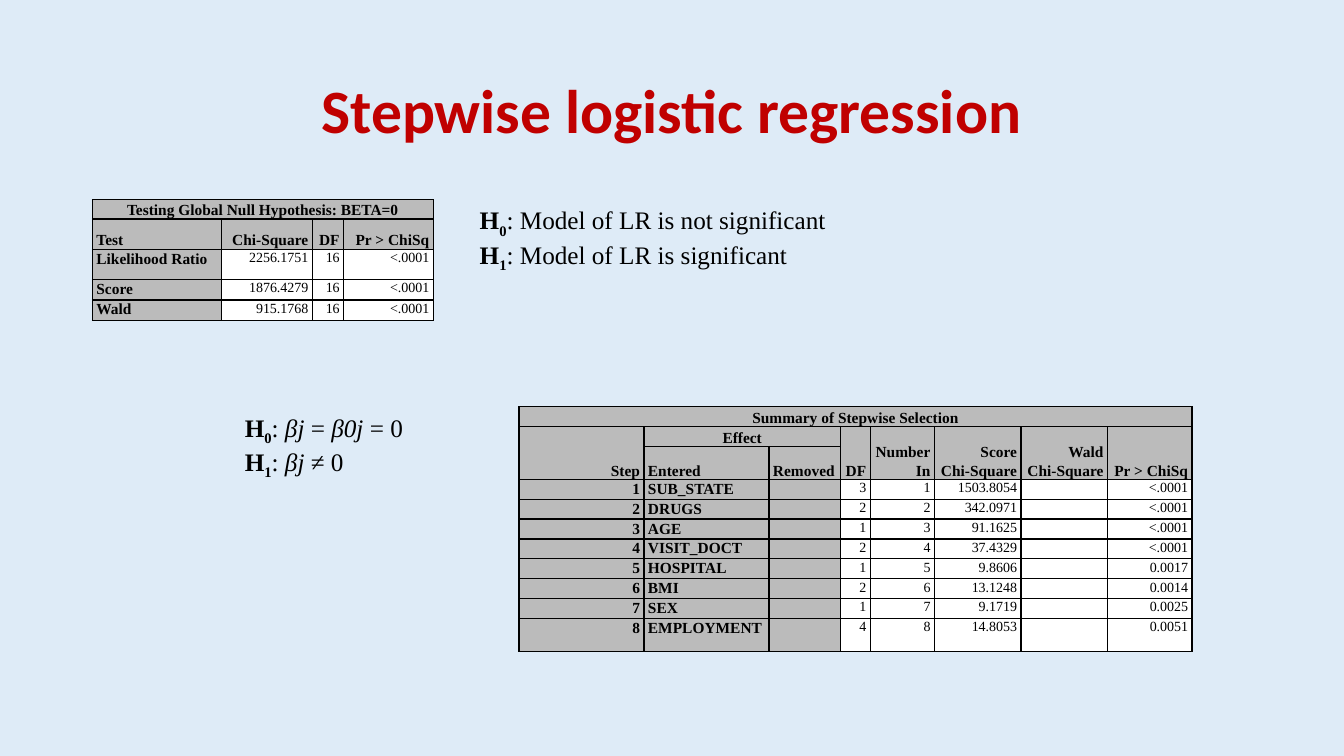
from copy import deepcopy

from lxml import etree
from pptx import Presentation
from pptx.dml.color import RGBColor
from pptx.enum.text import MSO_ANCHOR, MSO_AUTO_SIZE, PP_ALIGN
from pptx.oxml.ns import qn
from pptx.util import Cm, Pt

LEFT, CENTER, RIGHT = PP_ALIGN.LEFT, PP_ALIGN.CENTER, PP_ALIGN.RIGHT
TOP, MIDDLE, BOTTOM = MSO_ANCHOR.TOP, MSO_ANCHOR.MIDDLE, MSO_ANCHOR.BOTTOM
FIT_SHAPE = MSO_AUTO_SIZE.SHAPE_TO_FIT_TEXT

PALE_BLUE = RGBColor(0xDE, 0xEB, 0xF7)
DARK_RED = RGBColor(0xC0, 0x00, 0x00)
GREY = RGBColor(0xBB, 0xBB, 0xBB)
WHITE = RGBColor(0xFF, 0xFF, 0xFF)
BLACK = RGBColor(0x00, 0x00, 0x00)

TITLE_FONT, BODY_FONT = "Calibri", "Times New Roman"
TITLE_STYLE = {"name": TITLE_FONT, "size": Pt(44), "bold": True}
HYPOTHESIS_STYLE = {"name": BODY_FONT, "size": Pt(18)}
LABEL_STYLE = {"name": BODY_FONT, "size": Pt(11), "bold": True}
VALUE_STYLE = {"name": BODY_FONT, "size": Pt(10), "bold": False}
CELL_FORMAT = {"margin_left": Cm(0.1), "margin_right": Cm(0.1),
               "margin_top": 0, "margin_bottom": 0}
CELL_SPACING = {"line_spacing": 1.07, "space_before": Pt(3), "space_after": Pt(3)}


def apply(target, values):
    for name, value in values.items():
        setattr(target, name, value)


class StatSlide:
    """Holds the current slide and draws its elements in one style."""

    def __init__(self, presentation):
        self.slide = presentation.slides.add_slide(presentation.slide_layouts[5])
        background = self.slide.background.fill
        background.solid()
        background.fore_color.rgb = PALE_BLUE

    def style(self, font, values, color=BLACK):
        apply(font, values)
        font.color.rgb = color

    def title(self, text, left, top, width, height):
        title = self.slide.shapes.title
        apply(title, {"left": Cm(left), "top": Cm(top),
                      "width": Cm(width), "height": Cm(height)})
        title.text_frame.vertical_anchor = MIDDLE
        line = title.text_frame.paragraphs[0]
        line.text = text
        apply(line, {"alignment": CENTER, "line_spacing": 0.9})
        self.style(line.runs[0].font, TITLE_STYLE, DARK_RED)

    def hypotheses(self, statements, left, top, width, height):
        """Write H0, H1, ...; each statement is a list of (text, italic)."""
        box = self.slide.shapes.add_textbox(Cm(left), Cm(top), Cm(width), Cm(height))
        frame = box.text_frame
        apply(frame, {"word_wrap": True, "auto_size": FIT_SHAPE})
        for index, statement in enumerate(statements):
            line = frame.add_paragraph() if index else frame.paragraphs[0]
            parts = [("H", {"bold": True}), (str(index), {"bold": True})]
            parts += [(text, {"italic": italic}) for text, italic in statement]
            for text, emphasis in parts:
                run = line.add_run()
                run.text = text
                self.style(run.font, HYPOTHESIS_STYLE | emphasis)
            subscript = line.runs[1]
            subscript.font._element.set("baseline", "-25000")

    def borders(self, cell):
        properties = cell._tc.get_or_add_tcPr()
        for side in ("lnL", "lnR", "lnT", "lnB"):
            edge = etree.SubElement(properties, qn(f"a:{side}"), w=str(Pt(1)))
            fill = etree.SubElement(edge, qn("a:solidFill"))
            etree.SubElement(fill, qn("a:srgbClr"), val=str(BLACK))

    def cell(self, cell, text, is_label, alignment, anchor):
        self.borders(cell)
        cell.fill.solid()
        cell.fill.fore_color.rgb = GREY if is_label else WHITE
        apply(cell, CELL_FORMAT | {"vertical_anchor": anchor})
        line = cell.text_frame.paragraphs[0]
        line.text = text
        apply(line, CELL_SPACING | {"alignment": alignment})
        for run in line.runs:
            self.style(run.font, LABEL_STYLE if is_label else VALUE_STYLE)
        # Line breaks and empty cells need a text size of their own
        for line_break in line._p.findall(qn("a:br")):
            line_break.append(deepcopy(line.runs[0].font._element))
        if not text:
            etree.SubElement(line._p, qn("a:endParaRPr"), sz="1000")

    def table(self, rows, left, top, widths, heights, alignments,
              header_rows, label_columns, merges):
        """Draw rows; merges are (row, column, last row, last column)."""
        grid = self.slide.shapes.add_table(
            len(rows), len(widths), Cm(left), Cm(top),
            Cm(sum(widths)), Cm(sum(heights))).table
        for column, width in zip(grid.columns, widths):
            column.width = Cm(width)
        for row, height in zip(grid.rows, heights):
            row.height = Cm(height)
        centered = {(r, c) for r, c, _, last in merges if last > c}
        for r, texts in enumerate(rows):
            for c, text in enumerate(texts):
                in_header = r < header_rows
                self.cell(grid.cell(r, c), text, in_header or c < label_columns,
                          CENTER if (r, c) in centered else alignments[c],
                          BOTTOM if in_header else TOP)
        for r, c, last_row, last_column in merges:
            grid.cell(r, c).merge(grid.cell(last_row, last_column))


def main():
    presentation = Presentation()
    presentation.slide_width, presentation.slide_height = Cm(33.87), Cm(19.05)
    page = StatSlide(presentation)

    # Title
    page.title("Stepwise logistic regression", 2.33, 1.01, 29.21, 3.68)

    # Stepwise selection summary
    steps = [
        ("SUB_STATE", "3", "1503.8054", "<.0001"),
        ("DRUGS", "2", "342.0971", "<.0001"),
        ("AGE", "1", "91.1625", "<.0001"),
        ("VISIT_DOCT", "2", "37.4329", "<.0001"),
        ("HOSPITAL", "1", "9.8606", "0.0017"),
        ("BMI", "2", "13.1248", "0.0014"),
        ("SEX", "1", "9.1719", "0.0025"),
        ("EMPLOYMENT", "4", "14.8053", "0.0051"),
    ]
    selection = [
        ["Summary of Stepwise Selection"] + [""] * 7,
        ["Step", "Effect", "", "DF", "Number\nIn", "Score\nChi-Square",
         "Wald\nChi-Square", "Pr > ChiSq"],
        ["", "Entered", "Removed"] + [""] * 5,
    ]
    selection += [[str(n), effect, "", df, str(n), score, "", probability]
                  for n, (effect, df, score, probability) in enumerate(steps, 1)]
    tall_headers = [(1, column, 2, column) for column in (0, 3, 4, 5, 6, 7)]
    page.table(selection, 13.08, 10.25,
               widths=[3.15, 3.15, 1.8, 0.75, 1.62, 2.18, 2.18, 2.13],
               heights=[0.5, 0.5, 0.83] + [0.5] * 7 + [0.83],
               alignments=[RIGHT, LEFT, LEFT] + [RIGHT] * 5,
               header_rows=3, label_columns=3,
               merges=[(0, 0, 0, 7), (1, 1, 1, 2)] + tall_headers)

    # Global null hypothesis tests
    tests = [("Likelihood Ratio", "2256.1751"), ("Score", "1876.4279"),
             ("Wald", "915.1768")]
    global_tests = [
        ["Testing Global Null Hypothesis: BETA=0", "", "", ""],
        ["Test", "Chi-Square", "DF", "Pr > ChiSq"],
    ]
    global_tests += [[test, chi_square, "16", "<.0001"] for test, chi_square in tests]
    page.table(global_tests, 2.33, 5.03,
               widths=[3.25, 2.29, 0.79, 2.26],
               heights=[0.49, 0.76, 0.76, 0.52, 0.52],
               alignments=[LEFT] + [RIGHT] * 3,
               header_rows=2, label_columns=1, merges=[(0, 0, 0, 3)])

    # Hypotheses on the model and on its coefficients
    page.hypotheses([[(": Model of LR is not significant", False)],
                     [(": Model of LR is significant", False)]],
                    11.84, 5.03, 17.48, 1.8)
    page.hypotheses([[(": ", False), ("βj", True), (" = ", False),
                      ("β0j", True), (" = 0", False)],
                     [(": ", False), ("βj", True), (" ≠ 0", False)]],
                    5.92, 10.26, 4.98, 1.8)

    presentation.save("out.pptx")


if __name__ == "__main__":
    main()
